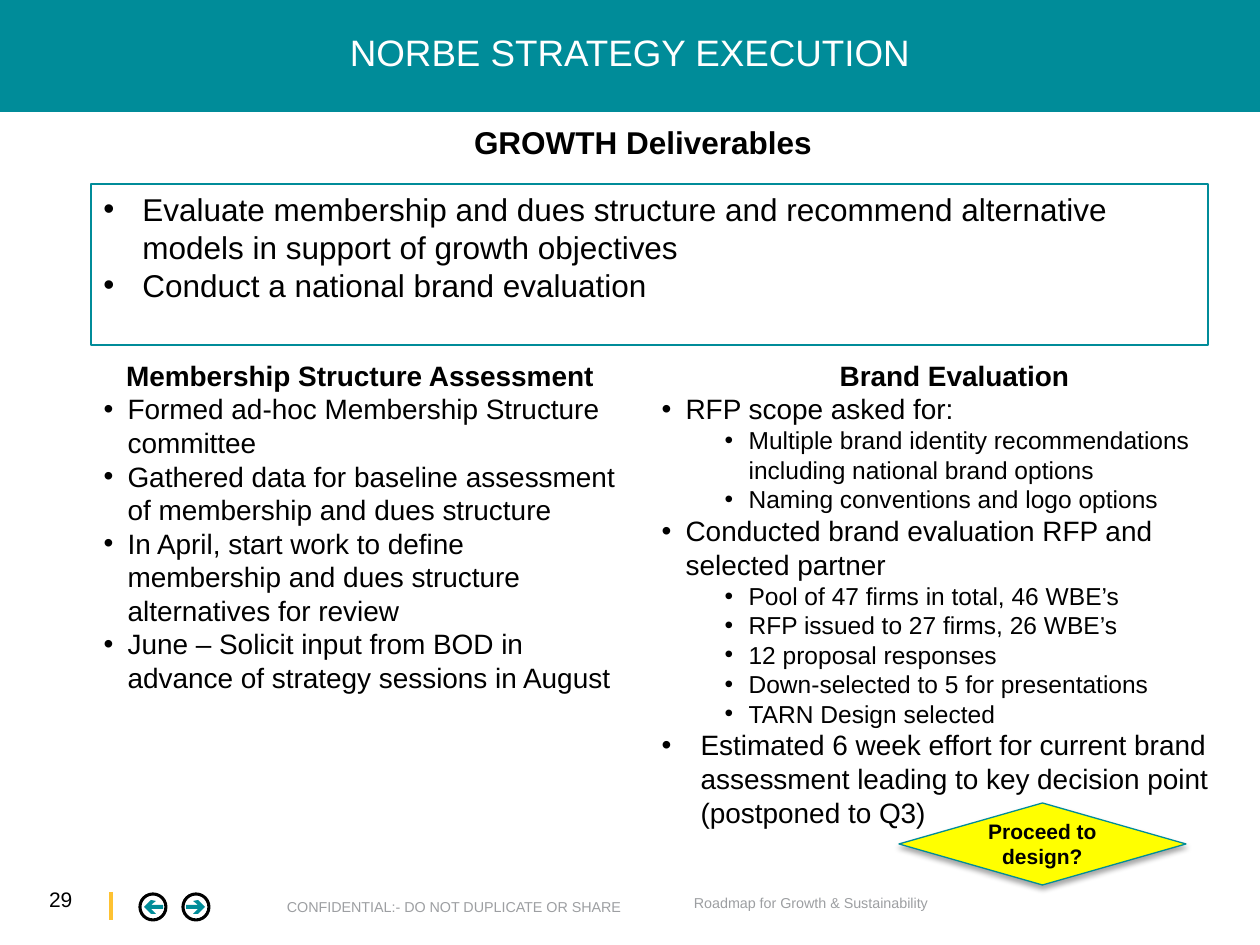
from lxml.etree import SubElement
from pptx import Presentation
from pptx.dml.color import RGBColor
from pptx.enum.shapes import MSO_CONNECTOR, MSO_SHAPE
from pptx.enum.text import MSO_ANCHOR, MSO_AUTO_SIZE, PP_ALIGN
from pptx.oxml.ns import qn
from pptx.util import Pt

SCALE = 914400 / 126
TEAL = RGBColor(0x00, 0x8C, 0x99)
YELLOW = RGBColor(0xFF, 0xFF, 0x00)
GOLD = RGBColor(0xFE, 0xC2, 0x32)
GRAY = RGBColor(0x9D, 0x9F, 0xA2)
BLACK = RGBColor(0x00, 0x00, 0x00)
WHITE = RGBColor(0xFF, 0xFF, 0xFF)

OBJECTIVES = [
    "Evaluate membership and dues structure and recommend alternative "
    "models in support of growth objectives",
    "Conduct a national brand evaluation",
]
MEMBERSHIP = [
    (0, 24, "Formed ad-hoc Membership Structure committee"),
    (0, 24, "Gathered data for baseline assessment of membership and dues structure"),
    (0, 24, "In April, start work to define membership and dues structure "
            "alternatives for review"),
    (0, 24, "June – Solicit input from BOD in advance of strategy sessions in August"),
]
BRAND = [
    (0, 24, "RFP scope asked for:"),
    (1, 24, "Multiple brand identity recommendations including national brand options"),
    (1, 24, "Naming conventions and logo options"),
    (0, 24, "Conducted brand evaluation RFP and selected partner"),
    (1, 24, "Pool of 47 firms in total, 46 WBE’s"),
    (1, 24, "RFP issued to 27 firms, 26 WBE’s"),
    (1, 24, "12 proposal responses"),
    (1, 24, "Down-selected to 5 for presentations"),
    (1, 24, "TARN Design selected"),
    (0, 39, "Estimated 6 week effort for current brand assessment leading to key "
            "decision point (postponed to Q3)"),
]
LEVEL_STEP = 63
LEVEL_SIZES = (16, 14)
ARROW = [(-10, -2), (2, -2), (-3, -6), (2, -7), (9, 0),
         (2, 7), (-3, 7), (2, 2), (-10, 2)]


def px(length):
    return round(length * SCALE)


def place(box, left, top, width, height):
    box.left, box.top, box.width, box.height = map(px, (left, top, width, height))


def set_frame(frame, inset=None, wrap=True, anchor=MSO_ANCHOR.TOP):
    frame.word_wrap = wrap
    frame.auto_size = MSO_AUTO_SIZE.NONE
    frame.vertical_anchor = anchor
    if inset is not None:
        frame.margin_left = frame.margin_right = px(inset)
        frame.margin_top = frame.margin_bottom = px(inset)


def next_paragraph(frame):
    first = frame.paragraphs[0]
    return frame.add_paragraph() if first.runs else first


def write(paragraph, text, size, color=BLACK, bold=False,
          align=PP_ALIGN.LEFT, spacing=1.0):
    paragraph.alignment = align
    paragraph.line_spacing = spacing
    paragraph.space_before = Pt(0)
    run = paragraph.add_run()
    run.text = text
    run.font.name = "Arial"
    run.font.size = Pt(size)
    run.font.bold = bold
    run.font.color.rgb = color


def set_indent(paragraph, margin, hanging):
    properties = paragraph._p.get_or_add_pPr()
    properties.set("marL", str(px(margin)))
    properties.set("indent", str(-px(hanging)))
    return properties


def add_bullet(frame, text, size, hanging, level=0):
    paragraph = next_paragraph(frame)
    paragraph.level = level
    properties = set_indent(paragraph, hanging + level * LEVEL_STEP, hanging)
    SubElement(properties, qn("a:buFont"), typeface="Arial")
    SubElement(properties, qn("a:buChar"), char="•")
    write(paragraph, text, size)


def fill_column(body, area, heading, items):
    place(body, *area)
    frame = body.text_frame
    set_frame(frame)
    paragraph = next_paragraph(frame)
    SubElement(set_indent(paragraph, 0, 0), qn("a:buNone"))
    write(paragraph, heading, 16, bold=True, align=PP_ALIGN.CENTER)
    for level, hanging, text in items:
        add_bullet(frame, text, LEVEL_SIZES[level], hanging, level)


def add_label(slide, area, text, size, color=BLACK, inset=0, wrap=False, **style):
    label = slide.shapes.add_textbox(*map(px, area))
    set_frame(label.text_frame, inset, wrap)
    write(label.text_frame.paragraphs[0], text, size, color, **style)


def paint(shape, fill=None, line=None, weight=0.75):
    shape.shadow.inherit = False
    if fill is None:
        shape.fill.background()
    else:
        shape.fill.solid()
        shape.fill.fore_color.rgb = fill
    if line is None:
        shape.line.fill.background()
    else:
        shape.line.color.rgb = line
        shape.line.width = Pt(weight)


def add_block(slide, preset, area, **paint_style):
    block = slide.shapes.add_shape(preset, *map(px, area))
    paint(block, **paint_style)
    return block


def add_nav_button(slide, center_x, center_y, direction):
    points = [(px(center_x + direction * x), px(center_y + y)) for x, y in ARROW]
    builder = slide.shapes.build_freeform(*points[0], scale=1.0)
    builder.add_line_segments(points[1:], close=True)
    paint(builder.convert_to_shape(), fill=TEAL)
    add_block(slide, MSO_SHAPE.OVAL, (center_x - 13, center_y - 13, 26, 26),
              line=BLACK, weight=1.75)


def add_divider(slide, x, top, bottom):
    divider = slide.shapes.add_connector(
        MSO_CONNECTOR.STRAIGHT, px(x), px(top), px(x), px(bottom))
    divider.line.color.rgb = GOLD
    divider.line.width = Pt(2)
    SubElement(divider._element.spPr, qn("a:effectLst"))


def add_decision(slide, area, text):
    decision = add_block(slide, MSO_SHAPE.FLOWCHART_DECISION, area,
                         fill=YELLOW, line=TEAL)
    effects = decision._element.spPr.find(qn("a:effectLst"))
    shadow = SubElement(effects, qn("a:outerShdw"), blurRad=str(Pt(3.1)),
                        dist=str(Pt(1.8)), dir="5400000", rotWithShape="0")
    tint = SubElement(shadow, qn("a:srgbClr"), val=str(BLACK))
    SubElement(tint, qn("a:alpha"), val="35000")
    set_frame(decision.text_frame, anchor=MSO_ANCHOR.MIDDLE)
    write(decision.text_frame.paragraphs[0], text, 12, bold=True,
          align=PP_ALIGN.CENTER)


def add_header(slide):
    banner = add_block(slide, MSO_SHAPE.RECTANGLE, (0, 0, 1260, 112), fill=TEAL)
    banner._element.getparent().insert(2, banner._element)
    title = slide.shapes.title
    place(title, 53, 0, 1154, 110)
    set_frame(title.text_frame, inset=0, anchor=MSO_ANCHOR.MIDDLE)
    write(title.text_frame.paragraphs[0], "NORBE STRATEGY EXECUTION", 21, WHITE,
          align=PP_ALIGN.CENTER, spacing=0.9)
    add_label(slide, (340, 117, 606, 50), "GROWTH Deliverables", 18,
              inset=None, wrap=True, bold=True, align=PP_ALIGN.CENTER)


def add_objectives(slide):
    objectives = add_block(slide, MSO_SHAPE.RECTANGLE, (91, 184, 1117, 161), line=TEAL)
    set_frame(objectives.text_frame)
    for text in OBJECTIVES:
        add_bullet(objectives.text_frame, text, 18, 39)


def add_footer(slide):
    add_label(slide, (49, 887, 68, 25), "29", 12)
    add_divider(slide, 111, 892, 920)
    add_nav_button(slide, 153, 907, -1)
    add_nav_button(slide, 196, 907, 1)
    add_label(slide, (287, 898, 343, 18),
              "CONFIDENTIAL:- DO NOT DUPLICATE OR SHARE", 8.2, GRAY)
    add_label(slide, (694, 894, 239, 18),
              "Roadmap for Growth & Sustainability", 8.2, GRAY)


def main():
    deck = Presentation()
    deck.slide_width, deck.slide_height = px(1260), px(945)
    slide = deck.slides.add_slide(deck.slide_layouts[3])
    add_header(slide)
    add_objectives(slide)
    fill_column(slide.placeholders[1], (91, 352, 538, 437),
                "Membership Structure Assessment", MEMBERSHIP)
    fill_column(slide.placeholders[2], (649, 352, 611, 488),
                "Brand Evaluation", BRAND)
    add_decision(slide, (899, 803, 287, 82), "Proceed to design?")
    add_footer(slide)
    deck.save("out.pptx")


if __name__ == "__main__":
    main()
